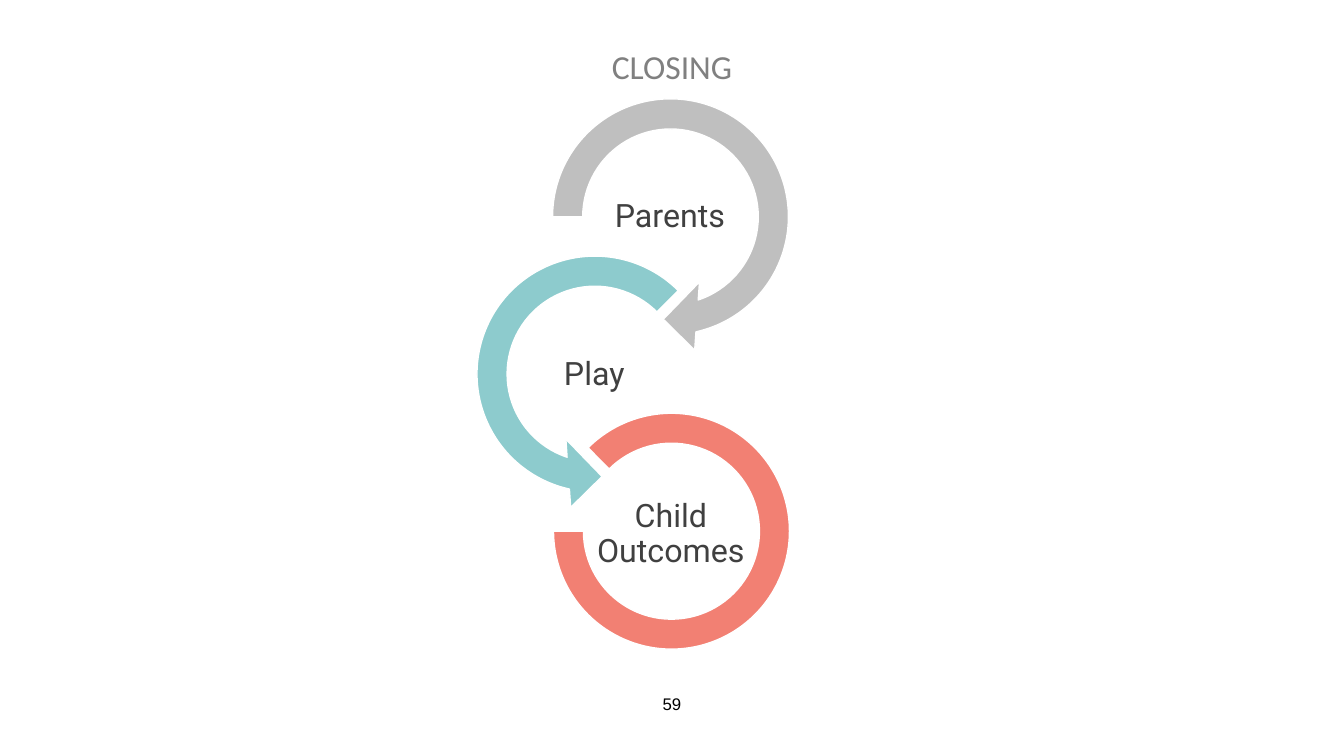
from pptx import Presentation
from pptx.dml.color import RGBColor
from pptx.enum import shapes, text
from pptx.util import Inches, Pt

COLORS = {
    "white": "FFFFFF", "black": "000000", "title": "808080", "label": "404040",
    "parents": "BFBFBF", "play": "8DCBCD", "outcomes": "F28073",
}

presentation = Presentation()
presentation.slide_width = Inches(13.33)
presentation.slide_height = Inches(7.5)
slide = presentation.slides.add_slide(presentation.slide_layouts[6])


def add_text(words, box, size, font, color, spacing=1.0, inset=0.05):
    shape = slide.shapes.add_textbox(*map(Inches, box))
    frame = shape.text_frame
    frame_format = {"word_wrap": True, "vertical_anchor": text.MSO_ANCHOR.MIDDLE}
    for side in ("left", "top", "right", "bottom"):
        frame_format["margin_" + side] = Inches(inset)
    for name, value in frame_format.items():
        setattr(frame, name, value)
    paragraph = frame.paragraphs[0]
    paragraph.alignment = text.PP_ALIGN.CENTER
    paragraph.line_spacing = spacing
    run = paragraph.add_run()
    run.text = words
    for name, value in {"size": Pt(size), "name": font}.items():
        setattr(run.font, name, value)
    run.font.color.rgb = RGBColor.from_string(COLORS[color])


# Page number and title
add_text("59", (0, 6.63, 13.33, 0.7), 12, "Arial", "black")
add_text("CLOSING", (0, 0.01, 13.33, 1.34), 24, "Calibri", "title", 0.9)

# Chain of rings: kind, left, top, diameter, adjustments, color, label, label left and top
KINDS = shapes.MSO_SHAPE
rings = [
    (KINDS.CIRCULAR_ARROW, 5.29, 0.79, 2.72, (0.11, 11.423, 45, 108, 0.125),
     "parents", "Parents", 5.89, 1.77),
    (KINDS.LEFT_CIRCULAR_ARROW, 4.54, 2.35, 2.72, (0.11, 11.423, 63, 189, 0.125),
     "play", "Play", 5.14, 3.34),
    (KINDS.BLOCK_ARC, 5.49, 4.1, 2.34, (135, 108, 0.127),
     "outcomes", "Child Outcomes", 5.9, 4.92),
]
for kind, left, top, diameter, adjustments, color, label, label_left, label_top in rings:
    ring = slide.shapes.add_shape(kind, *map(Inches, (left, top, diameter, diameter)))
    for index, value in enumerate(adjustments):
        ring.adjustments[index] = value
    ring.shadow.inherit = False
    ring.fill.solid()
    ring.fill.fore_color.rgb = RGBColor.from_string(COLORS[color])
    ring.line.color.rgb = RGBColor.from_string(COLORS["white"])
    ring.line.width = Pt(1)
    add_text(label, (label_left, label_top, 1.51, 0.76), 23, "Roboto", "label", 0.9, 0.02)

presentation.save("out.pptx")
